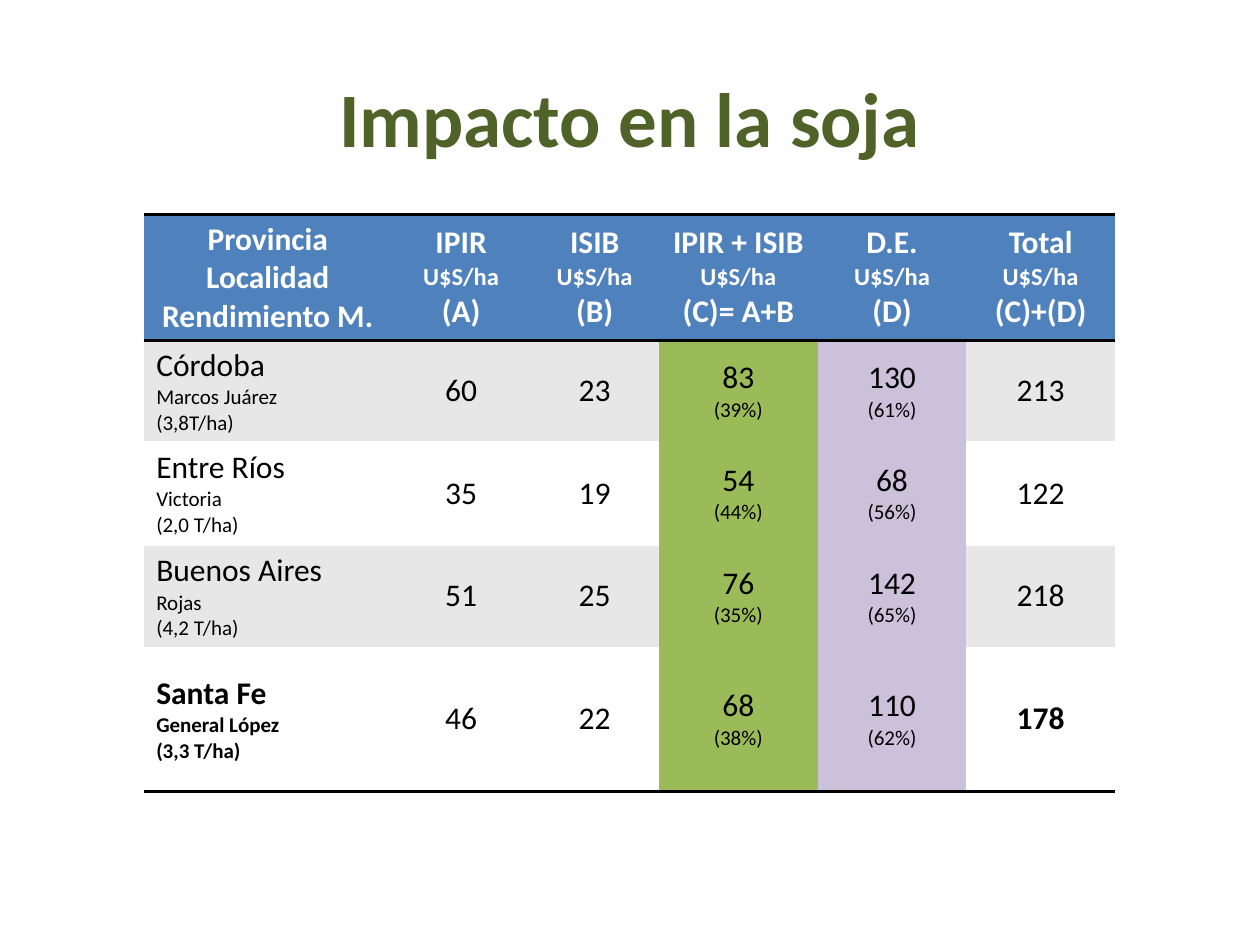
from lxml import etree
from pptx import Presentation
from pptx.dml.color import RGBColor
from pptx.enum.text import MSO_ANCHOR, PP_ALIGN
from pptx.oxml.ns import qn
from pptx.util import Inches, Pt

CENTER, LEFT = PP_ALIGN.CENTER, PP_ALIGN.LEFT
MIDDLE = MSO_ANCHOR.MIDDLE
FONT = "Calibri"
NO_GRID_STYLE = "{2D5ABB26-0587-4C30-8999-92F81FD0307C}"
BLACK, WHITE, GREY = "000000", "FFFFFF", "E7E7E7"
HEADER_BLUE, TITLE_GREEN = "4F81BD", "4F6228"
COLUMN_FILLS = {3: "9BBB59", 4: "CCC1DA"}

TITLE = "Impacto en la soja"
HEADERS = [
    ("Provincia", "Localidad", "Rendimiento M."),
    ("IPIR", "U$S/ha", "(A)"),
    ("ISIB", "U$S/ha", "(B)"),
    ("IPIR + ISIB", "U$S/ha", "(C)= A+B"),
    ("D.E.", "U$S/ha", "(D)"),
    ("Total", "U$S/ha", "(C)+(D)"),
]
PROVINCES = [
    [("Córdoba", "Marcos Juárez", "(3,8T/ha)"),
     ("60",), ("23",), ("83", "(39%)"), ("130", "(61%)"), ("213",)],
    [("Entre Ríos", "Victoria", "(2,0 T/ha)"),
     ("35",), ("19",), ("54", "(44%)"), ("68", "(56%)"), ("122",)],
    [("Buenos Aires", "Rojas", "(4,2 T/ha)"),
     ("51",), ("25",), ("76", "(35%)"), ("142", "(65%)"), ("218",)],
    [("Santa Fe", "General López", "(3,3 T/ha)"),
     ("46",), ("22",), ("68", "(38%)"), ("110", "(62%)"), ("178",)],
]
COLUMN_WIDTHS = [1.97, 1.1, 1.02, 1.26, 1.18, 1.18]
ROW_HEIGHTS = [0.84, 0.78, 0.83, 0.75, 1.15]


def rgb(color):
    return RGBColor.from_string(color)


def write_lines(frame, lines, sizes, color, bold, align):
    for index, (line, size) in enumerate(zip(lines, sizes)):
        paragraph = frame.paragraphs[0] if index == 0 else frame.add_paragraph()
        paragraph.text = line
        paragraph.alignment = align
        font = paragraph.font
        font.name, font.size, font.bold = FONT, Pt(size), bold
        font.color.rgb = rgb(color)


def add_rule(cell, side):
    line = etree.SubElement(cell._tc.get_or_add_tcPr(), qn(f"a:{side}"), w=str(Pt(2)))
    fill = etree.SubElement(line, qn("a:solidFill"))
    etree.SubElement(fill, qn("a:srgbClr"), val=BLACK)


def fill_cell(cell, lines, sizes, fill, color, bold, align, rules):
    for side in rules:
        add_rule(cell, side)
    cell.fill.solid()
    cell.fill.fore_color.rgb = rgb(fill)
    cell.vertical_anchor = MIDDLE
    write_lines(cell.text_frame, lines, sizes, color, bold, align)


def add_title(slide):
    box = slide.shapes.add_textbox(Inches(0.5), Inches(0.3), Inches(9), Inches(1.25))
    frame = box.text_frame
    frame.word_wrap = True
    frame.vertical_anchor = MIDDLE
    write_lines(frame, [TITLE], [44], TITLE_GREEN, True, CENTER)


def add_impact_table(slide):
    table = slide.shapes.add_table(
        len(ROW_HEIGHTS), len(COLUMN_WIDTHS), Inches(1.14), Inches(1.7),
        Inches(sum(COLUMN_WIDTHS)), Inches(sum(ROW_HEIGHTS))).table
    table._tbl.tblPr.find(qn("a:tableStyleId")).text = NO_GRID_STYLE
    table.horz_banding = False
    for column, width in zip(table.columns, COLUMN_WIDTHS):
        column.width = Inches(width)
    for row, height in zip(table.rows, ROW_HEIGHTS):
        row.height = Inches(height)

    for col, lines in enumerate(HEADERS):
        sizes = (18, 14 if col else 18, 18)
        fill_cell(table.cell(0, col), lines, sizes, HEADER_BLUE, WHITE, True,
                  CENTER, ("lnT", "lnB"))

    last_row, last_col = len(PROVINCES), len(HEADERS) - 1
    for row, province in enumerate(PROVINCES, start=1):
        band = GREY if row % 2 else WHITE
        rules = ("lnB",) if row == last_row else ()
        for col, lines in enumerate(province):
            bold = row == last_row and col in (0, last_col)
            fill_cell(table.cell(row, col), lines, (18, 12, 12),
                      COLUMN_FILLS.get(col, band), BLACK, bold,
                      CENTER if col else LEFT, rules)


def main():
    deck = Presentation()
    deck.slide_width, deck.slide_height = Inches(10), Inches(7.5)
    slide = deck.slides.add_slide(deck.slide_layouts[6])
    add_title(slide)
    add_impact_table(slide)
    deck.save("out.pptx")


if __name__ == "__main__":
    main()
